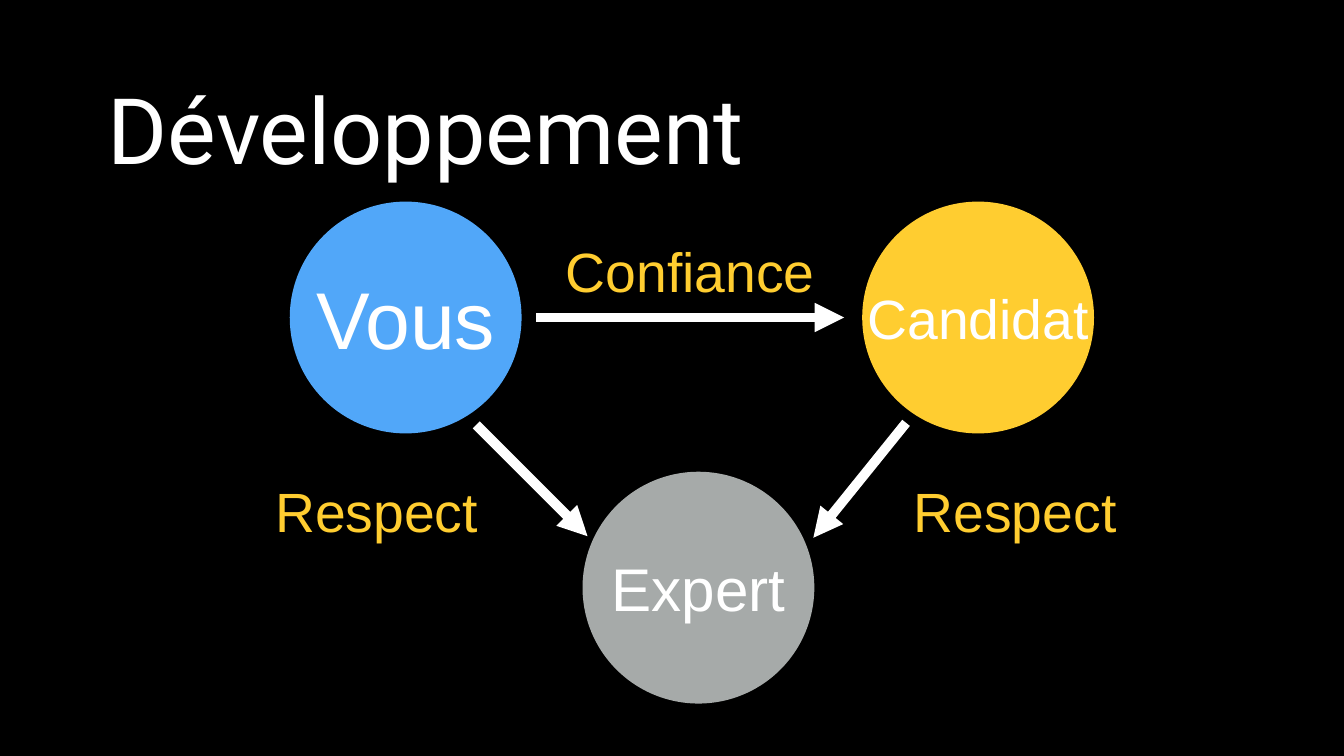
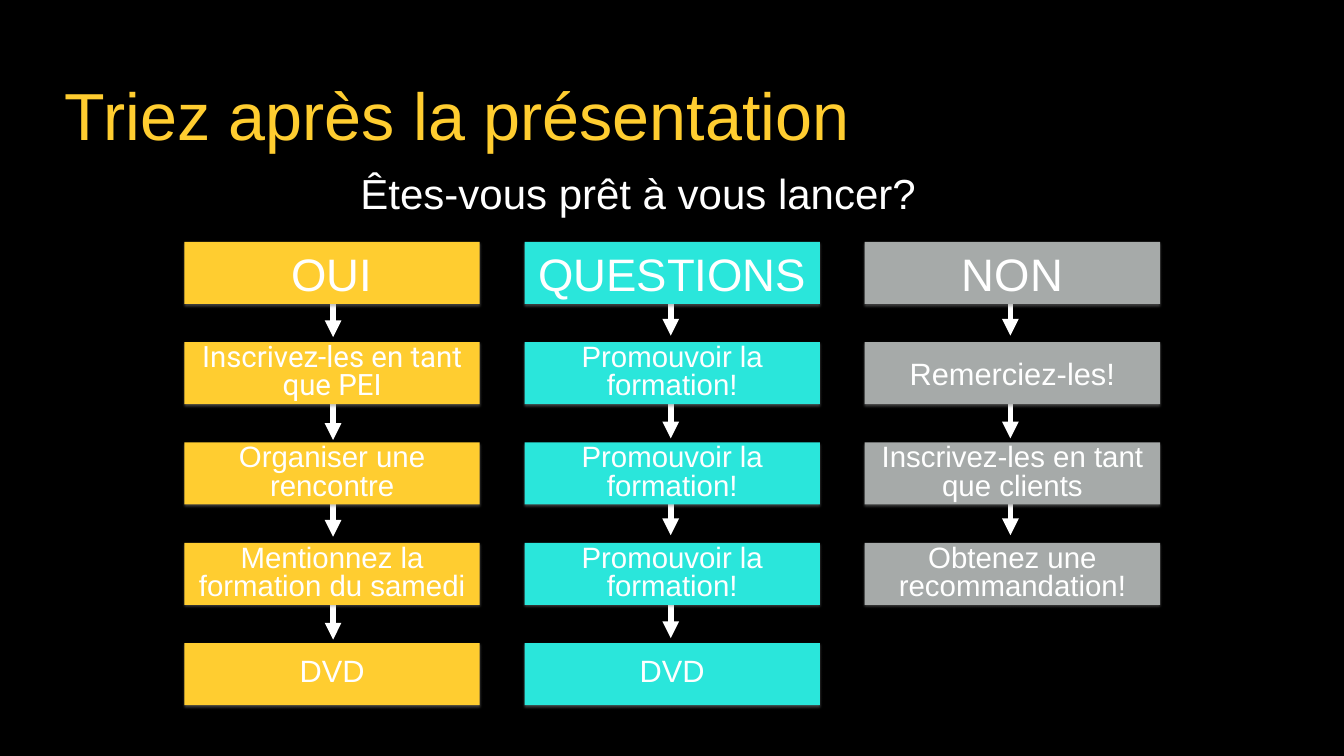
from lxml import etree
from pptx import Presentation
from pptx.dml.color import RGBColor
from pptx.enum import shapes, text
from pptx.oxml import ns
from pptx.util import Inches, Pt

BLACK, WHITE, GOLD = "000000", "FFFFFF", "FFCD30"
BLUE, TEAL, GREY = "51A7F9", "2AE6DB", "A6AAA9"
LEFT, MID = text.PP_ALIGN.LEFT, text.PP_ALIGN.CENTER
OVAL, RECT = shapes.MSO_SHAPE.OVAL, shapes.MSO_SHAPE.RECTANGLE


def paint(fill, color):
    fill.solid()
    fill.fore_color.rgb = RGBColor.from_string(color)


def add_slide(deck):
    slide = deck.slides.add_slide(deck.slide_layouts[6])
    paint(slide.background.fill, BLACK)
    return slide


def add_text(slide, words, x, y, w, h, size=79, color=WHITE, font="Arial",
             align=MID, wrap=True, space=None):
    box = slide.shapes.add_textbox(Inches(x), Inches(y), Inches(w), Inches(h))
    frame = box.text_frame
    frame.word_wrap = wrap
    frame.auto_size = text.MSO_AUTO_SIZE.SHAPE_TO_FIT_TEXT
    frame.vertical_anchor = text.MSO_ANCHOR.MIDDLE
    frame.margin_left = frame.margin_right = Inches(0.08)
    frame.margin_top = frame.margin_bottom = Inches(0.08)
    para = frame.paragraphs[0]
    para.alignment = align
    if space:
        para.line_spacing = space
    run = para.add_run()
    run.text = words
    run.font.name, run.font.size = font, Pt(size)
    paint(run.font.fill, color)


def add_form(slide, kind, x, y, w, h, color, shade):
    """Draw a filled shape without outline, with a soft shadow below it."""
    form = slide.shapes.add_shape(kind, Inches(x), Inches(y), Inches(w), Inches(h))
    paint(form.fill, color)
    form.line.fill.background()
    form.shadow.inherit = False
    effects = form._element.spPr.find(ns.qn("a:effectLst"))
    glow = etree.SubElement(effects, ns.qn("a:outerShdw"), blurRad=str(Pt(4)),
                            dist=str(Pt(2)), dir="5400000", rotWithShape="0")
    tone = etree.SubElement(glow, ns.qn("a:srgbClr"), val=shade)
    etree.SubElement(tone, ns.qn("a:alpha"), val="50000")


def add_arrow(slide, x1, y1, x2, y2, width):
    arrow = slide.shapes.add_connector(
        shapes.MSO_CONNECTOR.STRAIGHT, Inches(x1), Inches(y1), Inches(x2), Inches(y2))
    paint(arrow.line.fill, WHITE)
    arrow.line.width = Pt(width)
    etree.SubElement(arrow.line._get_or_add_ln(), ns.qn("a:tailEnd"), type="triangle")
    etree.SubElement(arrow._element.spPr, ns.qn("a:effectLst"))


def add_role(slide, words, x, y, color, size, height):
    """Draw a circle with its name centred over it."""
    side, wide = 4.6, 4.72
    add_form(slide, OVAL, x, y, side, side, color, BLACK)
    add_text(slide, words, x - 0.06, y + (side - height) / 2, wide, height, size=size)


def add_step(slide, words, x, y, color, size, height, **style):
    """Draw a bar with its words centred over it."""
    wide, high = 5.86, 1.23
    add_form(slide, RECT, x, y, wide, high, color, "808080")
    add_text(slide, words, x - 0.02, y + (high - height) / 2, 5.9, height,
             size=size, **style)


def build_roles(deck):
    slide = add_slide(deck)
    add_text(slide, "Développement", 2.06, 1.37, 12.91, 2.34, size=131,
             font="Roboto", align=LEFT, wrap=False)
    add_role(slide, "Vous", 5.75, 4, BLUE, 115, 1.94)
    add_role(slide, "Candidat", 17.11, 4, GOLD, 79, 1.4)
    add_role(slide, "Expert", 11.56, 9.36, GREY, 86, 1.49)
    for ends in ((10.64, 6.3, 16.75, 6.3), (17.98, 8.39, 16.14, 10.67),
                 (9.45, 8.43, 11.66, 10.64)):
        add_arrow(slide, *ends, 14)
    for words, x, y, align in (("Confiance", 10.38, 4.67, MID),
                               ("Respect", 18.05, 9.43, LEFT),
                               ("Respect", 5.38, 9.43, LEFT)):
        add_text(slide, words, x, y, 6.63, 1.4, color=GOLD, align=align)


def build_sort(deck):
    slide = add_slide(deck)
    train = "Promouvoir la formation!"
    # colour, arrow x, arrow drop, steps from top to bottom
    columns = (
        (GOLD, 6.61, 0.03, ("OUI", "Inscrivez-les en tant que PEI",
                            "Organiser une rencontre",
                            "Mentionnez la formation du samedi", "DVD")),
        (TEAL, 13.31, 0, ("QUESTIONS", train, train, train, "DVD")),
        (GREY, 20.05, 0, ("NON", "Remerciez-les!", "Inscrivez-les en tant que clients",
                          "Obtenez une recommandation!")),
    )
    add_text(slide, "Triez après la présentation", 1.21, 1.65, 23.43, 1.63,
             size=95, color=GOLD, align=LEFT, space=0.7)
    add_text(slide, "Êtes-vous prêt à vous lancer?", 7.07, 3.27, 11.19, 1.09,
             size=60, wrap=False)
    for col, (color, mid, drop, steps) in enumerate(columns):
        for top in (5.72, 7.76, 9.68, 11.72)[:len(steps) - 1]:
            add_arrow(slide, mid, top + drop, mid, top + drop + 0.94, 8)
        for row, words in enumerate(steps):
            place = (words, 3.66 + 6.75 * col, 4.8 + 1.99 * row, color)
            if row == 0:
                add_step(slide, *place, 65, 1.17)
            elif words == "DVD":
                add_step(slide, *place, 44, 0.83, space=0.8)
            elif " " not in words:
                add_step(slide, *place, 44, 0.83)
            else:
                font = "Roboto" if words.endswith("PEI") else "Arial"
                add_step(slide, *place, 42, 1.34, space=0.8, font=font)


def main():
    deck = Presentation()
    deck.slide_width, deck.slide_height = Inches(26.67), Inches(15)
    build_roles(deck)
    build_sort(deck)
    deck.save("out.pptx")


if __name__ == "__main__":
    main()
